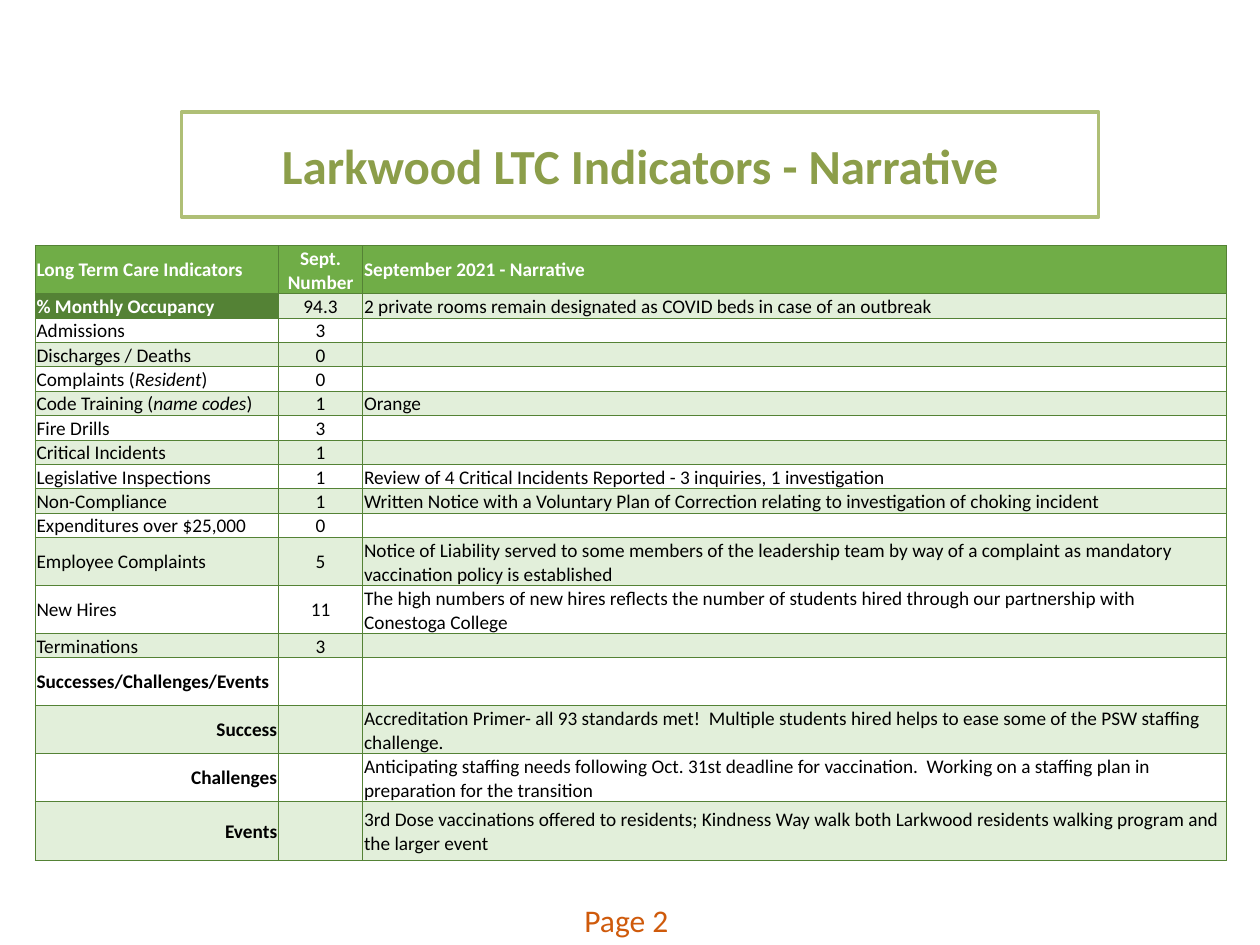
from dataclasses import dataclass
from lxml.etree import SubElement as Sub
from pptx import Presentation as Deck
from pptx.dml.color import RGBColor as RGB
from pptx.enum.text import MSO_ANCHOR as Anchor, MSO_AUTO_SIZE as Auto, PP_ALIGN as Align
from pptx.oxml.ns import qn
from pptx.util import Inches, Pt


@dataclass(frozen=True)
class Theme:
    font: str = "Calibri"
    head: float = 28
    page: float = 18
    body: float = 11
    rule: float = 0.5
    frame: float = 2
    olive: str = "8C9E4A"
    edge: str = "AFBF76"
    rust: str = "CF5A0B"
    green: str = "70AD47"
    dark: str = "548235"
    pale: str = "E2EFDA"
    white: str = "FFFFFF"
    black: str = "000000"


def write(box, text, size, color, font, bold=False, align=Align.LEFT):
    for i, line in enumerate(text.split("\n")):
        para = box.add_paragraph() if i else box.paragraphs[0]
        para.alignment = align
        if not line:
            para._p.get_or_add_endParaRPr().set("sz", str(int(size * 100)))
            continue
        for j, piece in enumerate(line.split("\v")):
            if j:
                para.add_line_break()
            for k, part in enumerate(piece.split("*")):
                run = para.add_run()
                run.text = part
                run.font.name = font
                run.font.size = Pt(size)
                run.font.bold = bold
                run.font.italic = k % 2 == 1
                run.font.color.rgb = RGB.from_string(color)


class Page:
    def __init__(self, deck, theme):
        self.style = theme
        self.slide = deck.slides.add_slide(deck.slide_layouts[5])

    def title(self, text, left, top, width, height):
        look = self.style
        box = self.slide.shapes.title
        box.left, box.top = Inches(left), Inches(top)
        box.width, box.height = Inches(width), Inches(height)
        box.fill.solid()
        box.fill.fore_color.rgb = RGB.from_string(look.white)
        box.line.color.rgb = RGB.from_string(look.edge)
        box.line.width = Pt(look.frame)
        frame = box.text_frame
        frame.word_wrap = True
        frame.auto_size = Auto.SHAPE_TO_FIT_TEXT
        frame.vertical_anchor = Anchor.MIDDLE
        write(frame, text, look.head, look.olive, look.font, bold=True, align=Align.CENTER)

    def label(self, text, left, top, width, height):
        look = self.style
        box = self.slide.shapes.add_textbox(
            Inches(left), Inches(top), Inches(width), Inches(height))
        box.text_frame.word_wrap = True
        write(box.text_frame, text, look.page, look.rust, look.font)

    def cell(self, cell, text, fill, color, bold, align):
        look = self.style
        cell.margin_left = cell.margin_right = cell.margin_top = Inches(0.01)
        cell.margin_bottom = 0
        cell.vertical_anchor = Anchor.MIDDLE
        props = cell._tc.get_or_add_tcPr()
        for side in ("lnL", "lnR", "lnT", "lnB"):
            line = Sub(props, qn("a:" + side), w=str(Pt(look.rule)))
            Sub(Sub(line, qn("a:solidFill")), qn("a:srgbClr"), val=look.dark)
        if fill:
            cell.fill.solid()
            cell.fill.fore_color.rgb = RGB.from_string(fill)
        else:
            cell.fill.background()
        write(cell.text_frame, text, look.body, color, look.font, bold, align)

    def table(self, rows, cols, highs, left, top):
        look = self.style
        grid = self.slide.shapes.add_table(
            len(rows), len(cols), Inches(left), Inches(top),
            Inches(sum(cols)), Inches(sum(highs))).table
        grid.first_row = grid.horz_banding = False
        for col, wide in zip(grid.columns, cols):
            col.width = Inches(wide)
        for row, high in zip(grid.rows, highs):
            row.height = Inches(high)
        split = next(i for i, row in enumerate(rows) if row[0].startswith("Successes"))
        for r, row in enumerate(rows):
            for c, text in enumerate(row):
                fill = look.green if r == 0 else look.pale if r % 2 else None
                if (r, c) == (1, 0):
                    fill = look.dark
                light = fill in (look.green, look.dark)
                align = Align.CENTER if c == 1 else Align.LEFT
                if c == 0 and r > split:
                    align = Align.RIGHT
                self.cell(grid.cell(r, c), text, fill,
                          look.white if light else look.black,
                          light or (c == 0 and r >= split), align)


ROWS = [
    ("Long Term Care Indicators", "Sept.\vNumber", "September 2021 - Narrative"),
    ("% Monthly Occupancy", "94.3",
     "2 private rooms remain designated as COVID beds in case of an outbreak"),
    ("Admissions", "3", ""),
    ("Discharges / Deaths", "0", ""),
    ("Complaints (*Resident*)", "0", ""),
    ("Code Training (*name codes*)", "1", "Orange"),
    ("Fire Drills", "3", ""),
    ("Critical Incidents", "1", ""),
    ("Legislative Inspections", "1",
     "Review of 4 Critical Incidents Reported - 3 inquiries, 1 investigation"),
    ("Non-Compliance", "1",
     "Written Notice with a Voluntary Plan of Correction relating to "
     "investigation of choking incident"),
    ("Expenditures over $25,000", "0", ""),
    ("Employee Complaints", "5",
     "Notice of Liability served to some members of the leadership team by way of "
     "a complaint as mandatory vaccination policy is established"),
    ("New Hires", "11",
     "The high numbers of new hires reflects the number of students hired through "
     "our partnership with\nConestoga College"),
    ("Terminations", "3", ""),
    ("Successes/Challenges/Events", "", ""),
    ("Success", "",
     "Accreditation Primer- all 93 standards met!  Multiple students hired helps "
     "to ease some of the PSW staffing challenge."),
    ("Challenges", "",
     "Anticipating staffing needs following Oct. 31st deadline for vaccination.  "
     "Working on a staffing plan in preparation for the transition"),
    ("Events", "",
     "3rd Dose vaccinations offered to residents; Kindness Way walk both Larkwood "
     "residents walking program and the larger event"),
]


def main():
    deck = Deck()
    deck.slide_width, deck.slide_height = Inches(10), Inches(7.5)
    page = Page(deck, Theme())
    page.title("Larkwood LTC Indicators - Narrative", 1.44, 1.02, 7.28, 0.57)
    page.label("Page 2", 4.54, 7.1, 2.33, 0.4)
    one, two, last = 0.19, 0.38, 0.47
    highs = [two] + [one] * 10 + [two] * 2 + [one] + [two] * 3 + [last]
    page.table(ROWS, [1.93, 0.67, 6.85], highs, 0.28, 1.95)
    deck.save("out.pptx")


if __name__ == "__main__":
    main()
